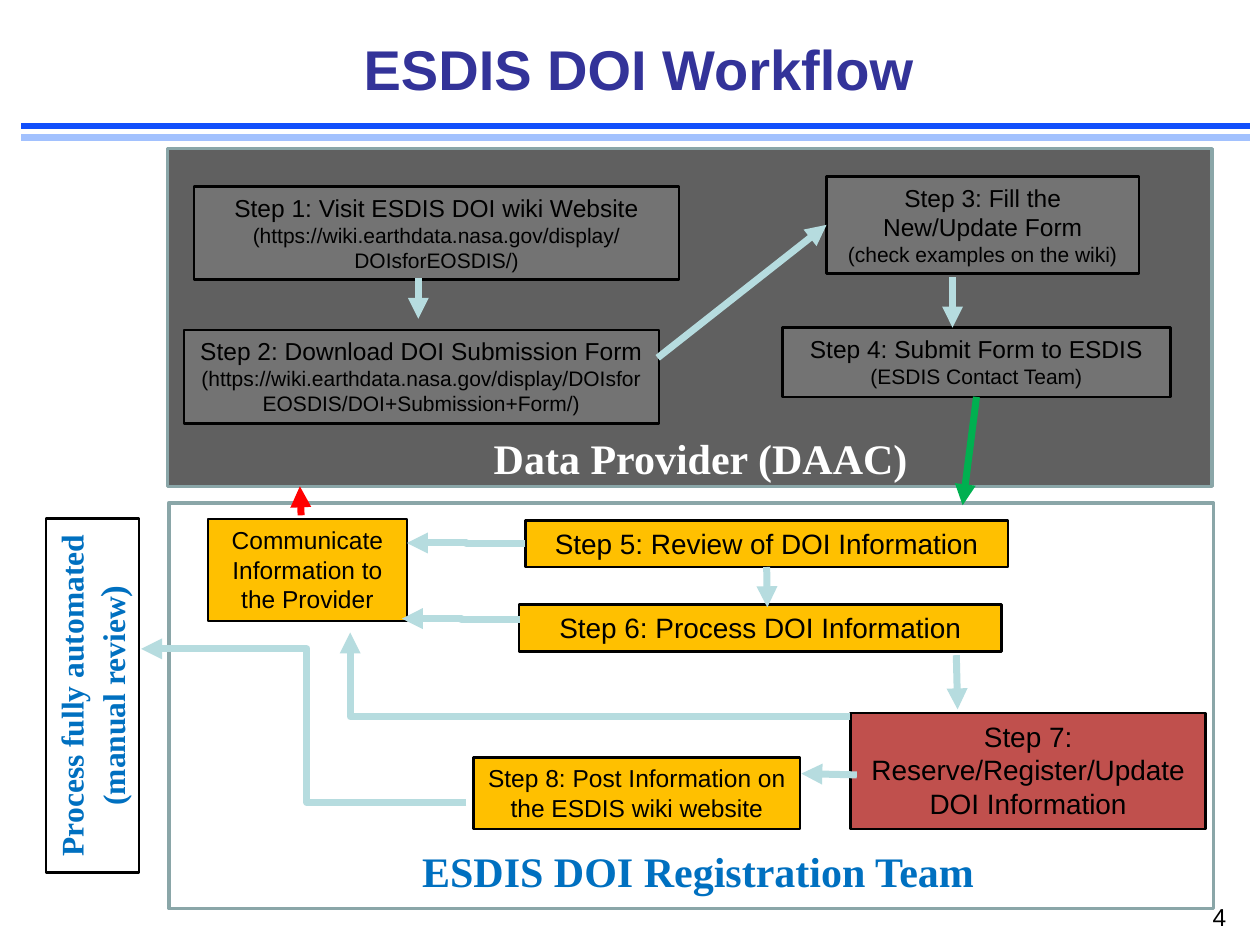
import pptx
import pptx.dml.color
import pptx.enum.shapes
import pptx.enum.text
import pptx.oxml.ns
import pptx.util
from lxml import etree

# The slide is a grid of square cells; every length below counts cells.
COLUMNS, ROWS = 100, 75
CELL = pptx.util.Inches(0.1)

COLORS = {
    "title": "333399", "rule": "114FFB", "rule_light": "A2C1FE",
    "panel_line": "8AA6A8", "dark": "606060", "gray": "737373",
    "amber": "FFC000", "red_box": "C0504D", "arrow": "B6DCDF",
    "green": "00B050", "red": "FF0000", "blue": "0070C0",
    "black": "000000", "white": "FFFFFF",
}
ARIAL, TIMES = "Arial", "Times New Roman"
CENTER = pptx.enum.text.PP_ALIGN.CENTER
TOP, LEFT, BOTTOM = 0, 1, 2


def rgb(color):
    return pptx.dml.color.RGBColor.from_string(COLORS[color])


def cells(values):
    return [round(value * CELL) for value in values]


def inside(box, offsets):
    """Turn a place given from the corner of a box into a place on the slide."""
    return (box[0] + offsets[0], box[1] + offsets[1], *offsets[2:])


def write(shape, paragraphs, color="black", font=ARIAL, bold=False, align=CENTER,
          anchor=pptx.enum.text.MSO_ANCHOR.TOP, wrap=True):
    """Fill a shape with paragraphs, each a list of (text, size) runs."""
    frame = shape.text_frame
    for name, value in {"word_wrap": wrap, "vertical_anchor": anchor}.items():
        setattr(frame, name, value)
    for index, runs in enumerate(paragraphs):
        paragraph = frame.add_paragraph() if index else frame.paragraphs[0]
        paragraph.alignment = align
        for text, size in runs:
            run = paragraph.add_run()
            run.text = text
            formats = {"size": pptx.util.Pt(size), "name": font, "bold": bold}
            for name, value in formats.items():
                setattr(run.font, name, value)
            run.font.color.rgb = rgb(color)
    return shape


def add_text(slide, box, paragraphs, **formats):
    return write(slide.shapes.add_textbox(*cells(box)), paragraphs, **formats)


def add_box(slide, box, fill, line="black", width=1.5):
    shape = slide.shapes.add_shape(
        pptx.enum.shapes.MSO_SHAPE.RECTANGLE, *cells(box))
    shape.shadow.inherit = False
    if fill:
        shape.fill.solid()
        shape.fill.fore_color.rgb = rgb(fill)
    else:
        shape.fill.background()
    shape.line.color.rgb = rgb(line)
    shape.line.width = pptx.util.Pt(width)
    return shape


def add_line(slide, start, end, color="arrow", head=True, bend=None):
    """Draw a line; bend is the share of the width where an elbow turns."""
    kinds = pptx.enum.shapes.MSO_CONNECTOR
    kind = kinds.STRAIGHT if bend is None else kinds.ELBOW
    connector = slide.shapes.add_connector(kind, *cells((*start, *end)))
    connector.line.color.rgb = rgb(color)
    connector.line.width = pptx.util.Pt(4)
    qn = pptx.oxml.ns.qn
    properties = connector._element.spPr
    if head:
        etree.SubElement(properties.find(qn("a:ln")), qn("a:tailEnd"), type="triangle")
    etree.SubElement(properties, qn("a:effectLst"))
    if bend is not None:
        adjustments = properties.find(qn("a:prstGeom")).find(qn("a:avLst"))
        etree.SubElement(adjustments, qn("a:gd"), name="adj1",
                         fmla=f"val {round(bend * 100000)}")
    return connector


def add_steps(slide, box, steps):
    return {name: write(add_box(slide, inside(box, place), fill), paragraphs)
            for name, (place, fill, paragraphs) in steps.items()}


def add_arrows(slide, box, arrows):
    return [add_line(slide, inside(box, start), inside(box, end), bend=bend)
            for start, end, bend in arrows]


def add_header(slide, box):
    title = add_text(slide, inside(box, (11, 1.2, 76, 9.3)),
                     [[("ESDIS DOI Workflow", 32)]], color="title", bold=True,
                     anchor=pptx.enum.text.MSO_ANCHOR.MIDDLE)
    title.text_frame.paragraphs[0].line_spacing = 0.85
    for row, color in ((10, "rule"), (10.9, "rule_light")):
        add_line(slide, inside(box, (0, row)), inside(box, (box[2], row)),
                 color, head=False)


def add_provider(slide, box):
    steps = add_steps(slide, box, {
        "visit": ((2.1, 3, 38.5, 7.4), "gray", [
            [("Step 1: Visit ESDIS DOI wiki Website", 14)],
            [("(https://wiki.earthdata.nasa.gov/display/DOIsforEOSDIS/)", 12)]]),
        "download": ((1.3, 14.4, 37.7, 7.4), "gray", [
            [("Step 2: Download DOI Submission Form ", 14),
             ("(https://wiki.earthdata.nasa.gov/display/DOIsforEOSDIS/"
              "DOI+Submission+Form/)", 12)]]),
        "fill": ((52.3, 2.2, 24.8, 7.7), "gray", [
            [("Step 3: Fill the New/Update Form", 14)],
            [("(check examples on the wiki)", 12)]]),
        "submit": ((48.8, 14.2, 30.8, 5.5), "gray", [
            [("Step 4: Submit Form to ESDIS", 14)],
            [("(ESDIS Contact Team)", 12)]]),
    })
    arrows = add_arrows(slide, box, [
        ((19.9, 10.3), (19.9, 13.5), None),
        ((62.3, 10.2), (62.3, 14.2), None),
        ((38.9, 16.6), (52.3, 6.1), None),
    ])
    arrows[-1].end_connect(steps["fill"], LEFT)
    add_text(slide, inside(box, (24.7, 22, 35.2, 5)), [[("Data Provider (DAAC)", 24)]],
             color="white", font=TIMES, bold=True, wrap=False)
    return steps


def add_registration(slide, box):
    steps = add_steps(slide, box, {
        "review": ((28.3, 1.4, 38.3, 3.7), "amber",
                   [[("Step 5: Review of DOI Information", 16)]]),
        "register": ((54.1, 16.7, 28.2, 9.2), "red_box",
                     [[("Step 7: Reserve/Register/Update DOI Information", 16)]]),
        "process": ((27.8, 8.1, 38.3, 3.7), "amber",
                    [[("Step 6: Process DOI Information", 16)]]),
        "communicate": ((3.1, 1.3, 15.8, 8.1), "amber",
                        [[("Communicate Information to the Provider", 14)]]),
        "post": ((24.2, 20.2, 25.9, 5.7), "amber",
                 [[("Step 8: Post Information on the ESDIS wiki website", 14)]]),
    })
    arrows = add_arrows(slide, box, [
        ((28.3, 3.25), (18.9, 3.2), 0.5),
        ((47.4, 5.1), (47.5, 8.3), None),
        ((27.9, 9.3), (18.5, 9.2), 0.5),
        ((62.5, 12.1), (62.6, 16.4), None),
        ((54.6, 21.6), (50.2, 21.5), None),
        ((54.1, 17), (14.4, 10.3), 1),
        ((23.6, 23.8), (-2.2, 11.6), 0.49),
    ])
    for arrow, side in zip(arrows, (LEFT, BOTTOM)):
        arrow.begin_connect(steps["review"], side)
    add_text(slide, inside(box, (18.9, 26.7, 46.2, 5)),
             [[("ESDIS DOI Registration Team", 24)]],
             color="blue", font=TIMES, bold=True, wrap=False)


def add_handoffs(slide, box, submit):
    """Join the two panels; box is the registration panel."""
    sent = add_line(slide, inside(box, (64.1, -8.4)), inside(box, (63, 0.2)), "green")
    sent.begin_connect(submit, BOTTOM)
    add_line(slide, inside(box, (10.5, 1)), inside(box, (10.4, -1.3)), "red")


def add_side_note(slide, box):
    """Place a note that reads upwards and fills the upright box."""
    left, top, width, height = box
    shift = (height - width) / 2
    note = add_box(slide, (left - shift, top + shift, height, width), None, width=1.25)
    note.rotation = 270
    write(note, [[("Process fully automated (manual review", 18), (")", 20)]],
          color="blue", font=TIMES, bold=True)


def main():
    presentation = pptx.Presentation()
    presentation.slide_width = COLUMNS * CELL
    presentation.slide_height = ROWS * CELL
    slide = presentation.slides.add_slide(presentation.slide_layouts[6])
    provider, registration = (13.3, 11.8, 82.9, 26.8), (13.4, 39.9, 82.9, 32.2)

    # Header and page number
    add_header(slide, (1.7, 0, 97.5, 11))
    add_text(slide, (77.5, 71.1, 20.8, 3.9), [[("4", 14)]],
             align=pptx.enum.text.PP_ALIGN.RIGHT)

    # Panels first, so that arrows may cross their edges
    for box, fill in ((registration, "white"), (provider, "dark")):
        add_box(slide, box, fill, "panel_line", 2)

    # Workflow
    provider_steps = add_provider(slide, provider)
    add_registration(slide, registration)
    add_handoffs(slide, registration, provider_steps["submit"])
    add_side_note(slide, (3.65, 41.15, 7.4, 28.1))
    presentation.save("out.pptx")


if __name__ == "__main__":
    main()
